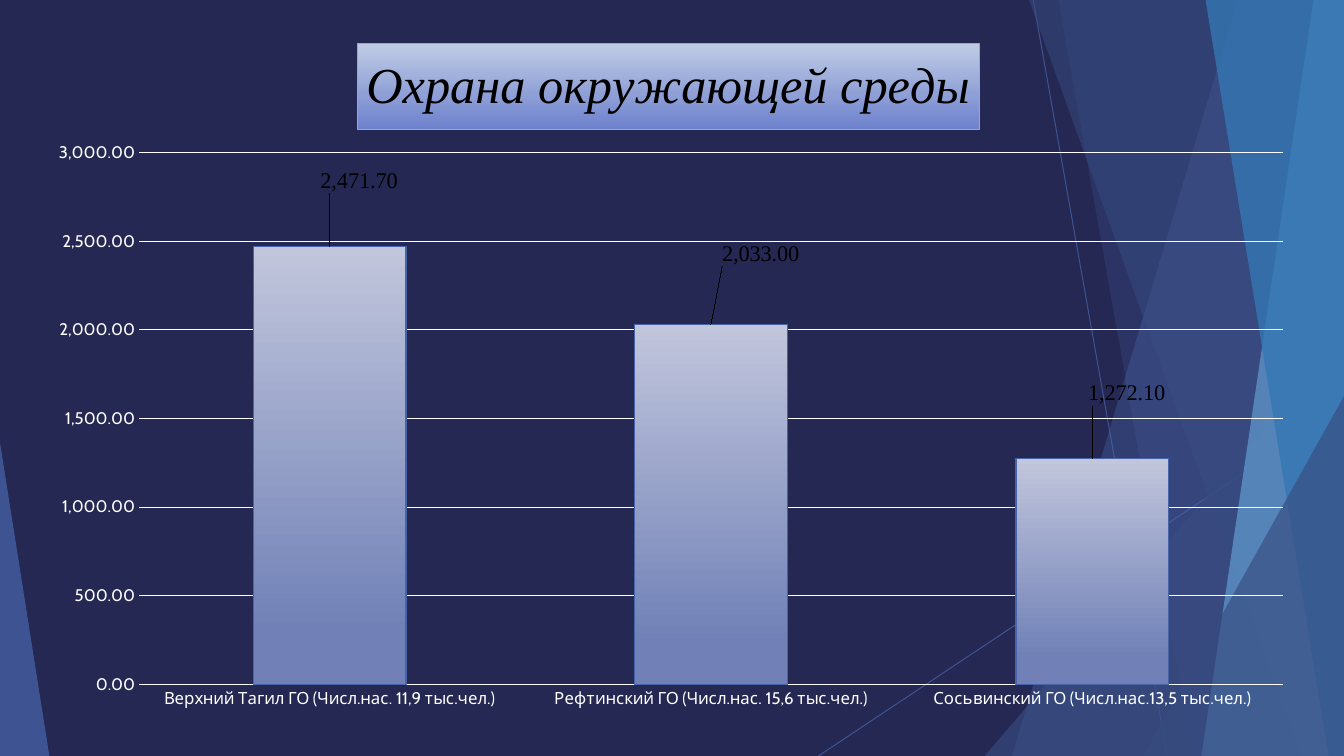
from lxml import etree
from pptx import Presentation
from pptx.chart.data import CategoryChartData
from pptx.dml.color import RGBColor
from pptx.enum.chart import XL_CHART_TYPE, XL_LABEL_POSITION, XL_TICK_MARK
from pptx.enum.shapes import MSO_CONNECTOR, MSO_SHAPE
from pptx.oxml import parse_xml
from pptx.oxml.ns import nsdecls, qn
from pptx.util import Pt

COLUMN = XL_CHART_TYPE.COLUMN_CLUSTERED
ABOVE = XL_LABEL_POSITION.OUTSIDE_END
NO_TICK = XL_TICK_MARK.NONE
STRAIGHT = MSO_CONNECTOR.STRAIGHT
TRIANGLE = MSO_SHAPE.ISOSCELES_TRIANGLE

# Content
TITLE = "Охрана окружающей среды"
# Town, value, label shift as shares of the chart size
TOWNS = [
    ("Верхний Тагил ГО (Числ.нас. 11,9 тыс.чел.)", 2471.7, (0.023, -0.07)),
    ("Рефтинский ГО (Числ.нас. 15,6 тыс.чел.)", 2033, (0.039, -0.077)),
    ("Сосьвинский ГО (Числ.нас.13,5 тыс.чел.)", 1272.1, (0.027, -0.07)),
]
FORMAT = "#,##0.00"

THEME = {
    "back": "242852", "blue": "4A66AC", "navy": "384C81", "sky": "629DD1",
    "sea": "3477B2", "white": "FFFFFF", "black": "000000",
    "bar": ("C1C6DC", "7181B7"), "edge": "4864A8",
    "box": ("C0CCE4", "6E82CE"), "frame": "90A9D6",
    "text": "Cabin", "serif": "Times New Roman",
    "axis": 12, "label": 16, "title": 36,
}

# Layout in points
WIDTH, HEIGHT = 960, 540
CHART = (23.8, 17.3, 910.8, 499)
PLOT = {"x": 0.083, "y": 0.184, "w": 0.897, "h": 0.761}
HEAD = {"x": 0.254, "y": 0.027}
RAYS = [(738, 0, 833.8, HEIGHT), (WIDTH, 290.2, 584.6, HEIGHT)]
# Panels reach the right edge: top x, bottom x, colour, opacity
# Wedges stand on the bottom edge: left, top, width, tip, colour, opacity
DECOR = [
    ("panel", 884.2, 722.9, "blue", 36),
    ("panel", 756, 851.8, "blue", 20),
    ("wedge", 703.4, 239.8, 256.6, 1, "navy", 66),
    ("panel", 735.1, 929.5, "navy", 50),
    ("panel", 938.2, 858.2, "sky", 70),
    ("panel", 861.1, 949, "sea", 80),
    ("wedge", 816.5, 283, 143.5, 1, "navy", 66),
    ("wedge", 0, 316.1, 35.3, 0, "blue", 70),
]


def paint(name):
    return RGBColor.from_string(THEME.get(name, name))


def fade(shape, share):
    for color in shape.element.spPr.iter(qn("a:srgbClr")):
        etree.SubElement(color, qn("a:alpha"), val=str(share * 1000))


def blend(fill, colors, end):
    fill.gradient()
    fill.gradient_angle = 270
    for stop, color, place in zip(fill.gradient_stops, colors, (0, end)):
        stop.color.rgb = paint(color)
        stop.position = place


def style(font, face, size, color):
    font.name, font.size = THEME[face], Pt(THEME[size])
    font.color.rgb = paint(color)
    font.bold = False


def place(marks, inner=False):
    parts = '<c:layoutTarget val="inner"/>' if inner else ""
    modes = [k for k in marks if inner or k in HEAD] if marks is not SHIFT else []
    parts += "".join(f'<c:{k}Mode val="edge"/>' for k in modes if k in "xy")
    parts += "".join(f'<c:{k} val="{v}"/>' for k, v in marks.items())
    return parse_xml(f'<c:layout {nsdecls("c")}><c:manualLayout>{parts}'
                     '</c:manualLayout></c:layout>')


SHIFT = {}


def draw_decor(slide):
    for x1, y1, x2, y2 in RAYS:
        ray = slide.shapes.add_connector(STRAIGHT, Pt(x1), Pt(y1), Pt(x2), Pt(y2))
        ray.line.color.rgb = paint("blue")
        ray.line.width = Pt(0.75)
        fade(ray, 70)
        etree.SubElement(ray.element.spPr, qn("a:effectLst"))
    for kind, *spots, color, share in DECOR:
        if kind == "panel":
            top, base = spots
            pen = slide.shapes.build_freeform(Pt(top), 0)
            pen.add_line_segments([(Pt(WIDTH), 0), (Pt(WIDTH), Pt(HEIGHT)),
                                   (Pt(base), Pt(HEIGHT))], close=True)
            shape = pen.convert_to_shape()
        else:
            left, top, width, tip = spots
            shape = slide.shapes.add_shape(
                TRIANGLE, Pt(left), Pt(top), Pt(width), Pt(HEIGHT - top))
            shape.adjustments[0] = tip
        shape.fill.solid()
        shape.fill.fore_color.rgb = paint(color)
        shape.line.fill.background()
        shape.shadow.inherit = False
        fade(shape, share)


def draw_title(chart):
    chart.has_title = True
    title = chart.chart_title
    para = title.text_frame.paragraphs[0]
    para.text = TITLE
    style(para.font, "serif", "title", "black")
    para.font.italic = True
    blend(title.format.fill, THEME["box"], 1)
    title.format.line.color.rgb = paint("frame")
    title.format.line.width = Pt(0.5)
    node = title._element
    for old in node.findall(qn("c:layout")):
        node.remove(old)
    node.find(qn("c:tx")).addnext(place(HEAD))
    title.include_in_layout = False


def draw_labels(series):
    for point, (_, _, (dx, dy)) in enumerate(TOWNS):
        label = series.points[point].data_label
        style(label.font, "serif", "label", "black")
        label.position = ABOVE
        SHIFT.update(x=dx, y=dy)
        index = series._element.xpath("c:dLbls/c:dLbl/c:idx")[point]
        frame = parse_xml(
            f'<c:spPr {nsdecls("c", "a")}><a:noFill/><a:ln w="9525"><a:solidFill>'
            f'<a:srgbClr val="{THEME["frame"]}"/></a:solidFill></a:ln></c:spPr>')
        form = parse_xml(f'<c:numFmt {nsdecls("c")} formatCode="{FORMAT}" '
                         'sourceLinked="0"/>')
        for part in (frame, form, place(SHIFT)):
            index.addnext(part)


def draw_chart(slide):
    data = CategoryChartData(number_format=FORMAT)
    data.categories = [town for town, _, _ in TOWNS]
    data.add_series(TITLE, [value for _, value, _ in TOWNS])
    chart = slide.shapes.add_chart(COLUMN, *map(Pt, CHART), data).chart
    chart.has_legend = False
    style(chart.font, "text", "axis", "white")
    draw_title(chart)

    # Axes and grid
    for axis in (chart.category_axis, chart.value_axis):
        style(axis.tick_labels.font, "text", "axis", "white")
        axis.major_tick_mark = axis.minor_tick_mark = NO_TICK
        axis.format.line.fill.background()
    scale = chart.value_axis
    scale.minimum_scale, scale.maximum_scale, scale.major_unit = 0, 3000, 500
    scale.tick_labels.number_format = FORMAT
    scale.tick_labels.number_format_is_linked = False
    grid = scale.major_gridlines.format.line
    grid.color.rgb = paint("white")
    grid.width = Pt(0.75)

    # Columns
    plot = chart.plots[0]
    plot.gap_width = 150
    plot.vary_by_categories = False
    series = plot.series[0]
    blend(series.format.fill, THEME["bar"], 0.88)
    series.format.line.color.rgb = paint("edge")
    series.format.line.width = Pt(0.75)
    draw_labels(series)

    area = chart._chartSpace.chart.plotArea
    for old in area.findall(qn("c:layout")):
        area.remove(old)
    area.insert(0, place(PLOT, inner=True))


def main():
    deck = Presentation()
    deck.slide_width, deck.slide_height = Pt(WIDTH), Pt(HEIGHT)
    slide = deck.slides.add_slide(deck.slide_layouts[6])
    slide.background.fill.solid()
    slide.background.fill.fore_color.rgb = paint("back")
    draw_decor(slide)
    draw_chart(slide)
    deck.save("out.pptx")


if __name__ == "__main__":
    main()
